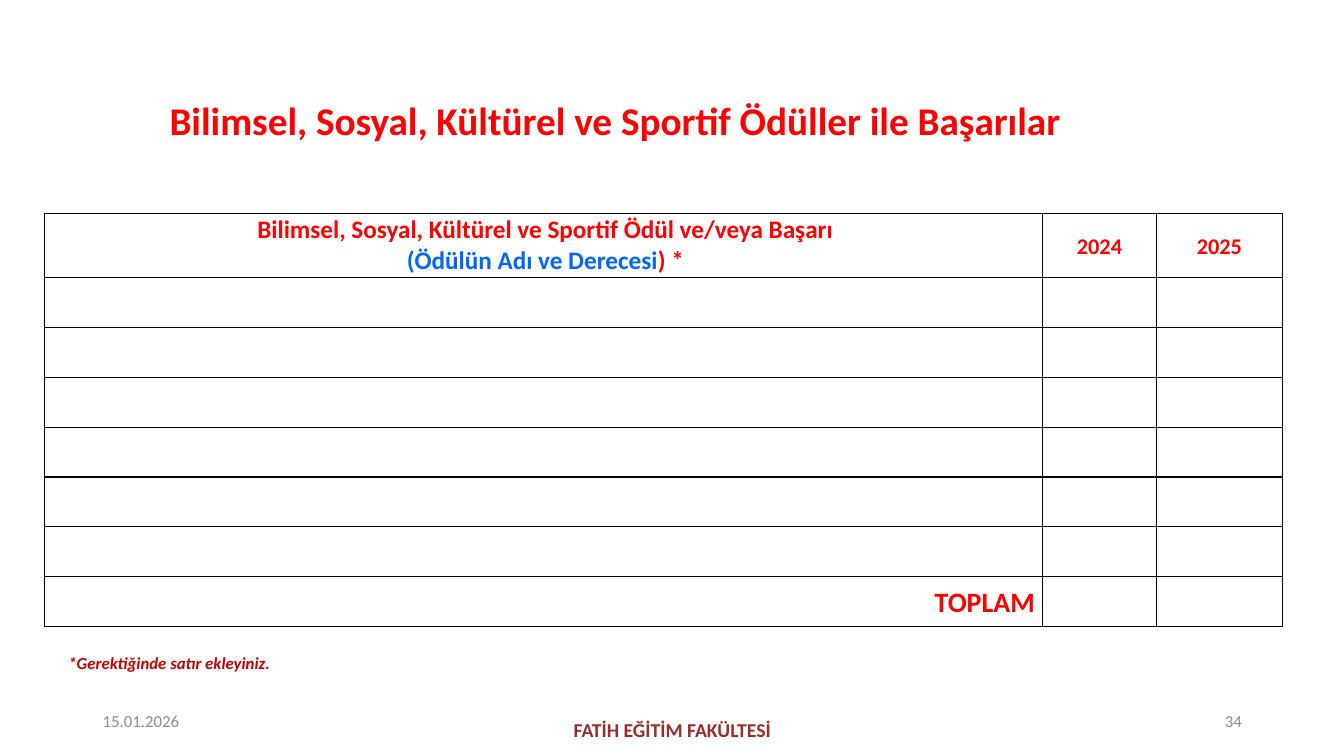
from dataclasses import dataclass

from lxml import etree
from pptx import Presentation
from pptx.dml.color import RGBColor
from pptx.enum.text import MSO_ANCHOR, PP_ALIGN
from pptx.oxml.ns import qn
from pptx.util import Pt

LEFT, CENTER, RIGHT = PP_ALIGN.LEFT, PP_ALIGN.CENTER, PP_ALIGN.RIGHT
TOP, MIDDLE = MSO_ANCHOR.TOP, MSO_ANCHOR.MIDDLE
FONT = "Calibri"
RED, BLUE, BLACK, WHITE, GRAY = "FF0000", "0066FF", "000000", "FFFFFF", "8C8C8C"

COLUMN_WIDTHS = (712.8, 81.36, 90)
HEADER_HEIGHT, ROW_HEIGHT, ROW_COUNT = 46.1, 35.6, 8


@dataclass
class Label:
    text: str
    left: float
    top: float
    width: float
    height: float
    size: float
    color: str
    align: PP_ALIGN = LEFT
    anchor: MSO_ANCHOR = MIDDLE
    bold: bool = False
    italic: bool = False


LABELS = (
    Label("FATİH EĞİTİM FAKÜLTESİ", 318.24, 506.88, 324, 28.8, 14, "962E2E",
          CENTER, bold=True),
    Label("15.01.2026", 66.24, 500.4, 216, 28.8, 12, GRAY),
    Label("34", 678.24, 500.4, 216, 28.8, 12, GRAY, RIGHT),
    Label("*Gerektiğinde satır ekleyiniz.", 41.76, 462.96, 360, 21.6, 12, "C00000",
          anchor=TOP, bold=True, italic=True),
)


def rgb(color: str) -> RGBColor:
    return RGBColor.from_string(color)


def format_paragraph(paragraph, size: float, color: str, align: PP_ALIGN,
                     bold: bool = True, italic: bool = False) -> None:
    paragraph.alignment = align
    font = paragraph.font
    font.name, font.size, font.bold, font.italic = FONT, Pt(size), bold, italic
    font.color.rgb = rgb(color)


def add_label(slide, label: Label) -> None:
    shape = slide.shapes.add_textbox(Pt(label.left), Pt(label.top),
                                     Pt(label.width), Pt(label.height))
    frame = shape.text_frame
    frame.word_wrap = True
    frame.vertical_anchor = label.anchor
    frame.text = label.text
    format_paragraph(frame.paragraphs[0], label.size, label.color, label.align,
                     label.bold, label.italic)


def format_cell(cell) -> None:
    properties = cell._tc.get_or_add_tcPr()
    for side in ("a:lnL", "a:lnR", "a:lnT", "a:lnB"):
        line = etree.SubElement(properties, qn(side), w=str(Pt(1)))
        fill = etree.SubElement(line, qn("a:solidFill"))
        etree.SubElement(fill, qn("a:srgbClr"), val=BLACK)
    cell.fill.solid()
    cell.fill.fore_color.rgb = rgb(WHITE)
    cell.vertical_anchor = MIDDLE
    cell.margin_left = cell.margin_right = Pt(5.4)
    cell.margin_top = cell.margin_bottom = Pt(0)


def fill_cell(cell, text: str, size: float, align: PP_ALIGN) -> None:
    cell.text = text
    paragraph = cell.text_frame.paragraphs[0]
    paragraph.line_spacing = 1.07
    format_paragraph(paragraph, size, RED, align)


def add_awards_table(slide) -> None:
    height = HEADER_HEIGHT + (ROW_COUNT - 1) * ROW_HEIGHT
    table = slide.shapes.add_table(ROW_COUNT, len(COLUMN_WIDTHS), Pt(31.9), Pt(152.4),
                                   Pt(sum(COLUMN_WIDTHS)), Pt(height)).table
    table.first_row = table.horz_banding = False
    for column, width in zip(table.columns, COLUMN_WIDTHS):
        column.width = Pt(width)
    for index, row in enumerate(table.rows):
        row.height = Pt(ROW_HEIGHT if index else HEADER_HEIGHT)
        for cell in row.cells:
            format_cell(cell)

    # Header row
    header = table.cell(0, 0)
    header.margin_left = Pt(8)
    header.text = "Bilimsel, Sosyal, Kültürel ve Sportif Ödül ve/veya Başarı"
    detail = header.text_frame.add_paragraph()
    for paragraph in header.text_frame.paragraphs:
        format_paragraph(paragraph, 18, RED, CENTER)
    for text, color in (("(Ödülün Adı ve Derecesi", BLUE), (") *", RED)):
        run = detail.add_run()
        run.text = text
        run.font.color.rgb = rgb(color)
    for index, year in enumerate(("2024", "2025"), start=1):
        fill_cell(table.cell(0, index), year, 16, CENTER)

    # Total row
    fill_cell(table.cell(ROW_COUNT - 1, 0), "TOPLAM", 20, RIGHT)


def add_title(slide) -> None:
    title = slide.shapes.title
    title.left, title.top, title.width, title.height = Pt(25.2), Pt(61.2), Pt(828), Pt(53.28)
    title.text = "Bilimsel, Sosyal, Kültürel ve Sportif Ödüller ile Başarılar"
    title.text_frame.vertical_anchor = MIDDLE
    paragraph = title.text_frame.paragraphs[0]
    paragraph.line_spacing = 0.9
    format_paragraph(paragraph, 28, RED, CENTER)


def main() -> None:
    presentation = Presentation()
    presentation.slide_width, presentation.slide_height = Pt(960), Pt(540)
    slide = presentation.slides.add_slide(presentation.slide_layouts[5])
    add_title(slide)
    add_awards_table(slide)
    # Footer and footnote
    for label in LABELS:
        add_label(slide, label)
    presentation.save("out.pptx")


if __name__ == "__main__":
    main()
